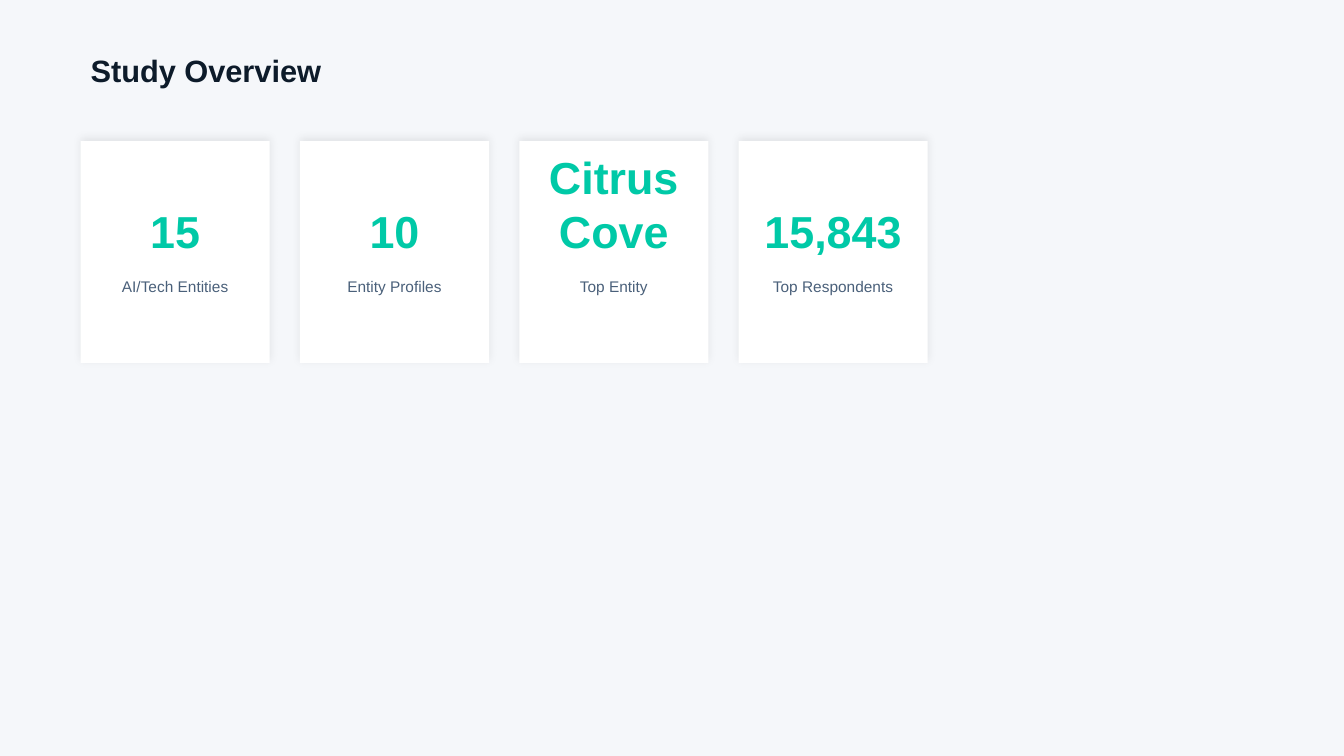
from dataclasses import dataclass

from lxml import etree
from pptx import Presentation
from pptx.dml.color import RGBColor
from pptx.enum.shapes import MSO_SHAPE
from pptx.enum.text import MSO_ANCHOR, PP_ALIGN
from pptx.oxml.ns import qn
from pptx.slide import Slide
from pptx.util import Emu, Pt

RECT = MSO_SHAPE.RECTANGLE
LEFT, CENTER = PP_ALIGN.LEFT, PP_ALIGN.CENTER
TOP, MIDDLE, BOTTOM = MSO_ANCHOR.TOP, MSO_ANCHOR.MIDDLE, MSO_ANCHOR.BOTTOM

PX_PER_INCH = 200
EMU_PER_PX = 914400 // PX_PER_INCH
SLIDE_W, SLIDE_H = 2666, 1500
MARGIN = 160
CARD_W, CARD_H, CARD_GAP, CARD_TOP = 375, 440, 60, 280
FONT = "Arial"
COLORS = {
    "background": "F5F7FA",
    "title": "0D1B2A",
    "card": "FFFFFF",
    "shadow": "000000",
    "value": "00C9A7",
    "label": "4A607A",
}


@dataclass(frozen=True)
class Box:
    left: int
    top: int
    width: int
    height: int

    def emu(self) -> tuple[Emu, Emu, Emu, Emu]:
        return px(self.left), px(self.top), px(self.width), px(self.height)


@dataclass(frozen=True)
class TextStyle:
    size: int
    color: str
    bold: bool
    align: PP_ALIGN
    anchor: MSO_ANCHOR


@dataclass(frozen=True)
class Stat:
    value: str
    label: str


TITLE = TextStyle(22, "title", True, LEFT, MIDDLE)
VALUE = TextStyle(32, "value", True, CENTER, BOTTOM)
LABEL = TextStyle(11, "label", False, CENTER, TOP)

STATS = [
    Stat("15", "AI/Tech Entities"),
    Stat("10", "Entity Profiles"),
    Stat("Citrus Cove", "Top Entity"),
    Stat("15,843", "Top Respondents"),
]


def px(length: int) -> Emu:
    return Emu(length * EMU_PER_PX)


def rgb(name: str) -> RGBColor:
    return RGBColor.from_string(COLORS[name])


def add_text(slide: Slide, text: str, box: Box, style: TextStyle) -> None:
    tf = slide.shapes.add_textbox(*box.emu()).text_frame
    tf.word_wrap = True
    tf.vertical_anchor = style.anchor
    tf.text = text
    p = tf.paragraphs[0]
    p.alignment = style.align
    font = p.runs[0].font
    font.name = FONT
    font.size = Pt(style.size)
    font.bold = style.bold
    font.color.rgb = rgb(style.color)


def add_card(slide: Slide, box: Box) -> None:
    sp = slide.shapes.add_shape(RECT, *box.emu())
    sp.fill.solid()
    sp.fill.fore_color.rgb = rgb("card")
    sp.line.fill.background()
    sp.shadow.inherit = False
    effects = sp._element.spPr.find(qn("a:effectLst"))
    shadow = etree.SubElement(
        effects, qn("a:outerShdw"), blurRad=str(Pt(6)), dist=str(Pt(2)),
        dir=str(270 * 60000), algn="bl", rotWithShape="0",
    )
    color = etree.SubElement(shadow, qn("a:srgbClr"), val=COLORS["shadow"])
    etree.SubElement(color, qn("a:alpha"), val="8000")


def add_stat(slide: Slide, stat: Stat, left: int) -> None:
    add_card(slide, Box(left, CARD_TOP, CARD_W, CARD_H))
    add_text(slide, stat.value, Box(left, CARD_TOP + 40, CARD_W, 200), VALUE)
    add_text(slide, stat.label, Box(left, CARD_TOP + 260, CARD_W, 140), LABEL)


def main() -> None:
    prs = Presentation()
    prs.slide_width, prs.slide_height = px(SLIDE_W), px(SLIDE_H)
    slide = prs.slides.add_slide(prs.slide_layouts[6])
    slide.background.fill.solid()
    slide.background.fill.fore_color.rgb = rgb("background")
    add_text(slide, "Study Overview", Box(MARGIN, 80, 1680, 120), TITLE)
    for i, stat in enumerate(STATS):
        add_stat(slide, stat, MARGIN + i * (CARD_W + CARD_GAP))
    prs.save("out.pptx")


if __name__ == "__main__":
    main()
